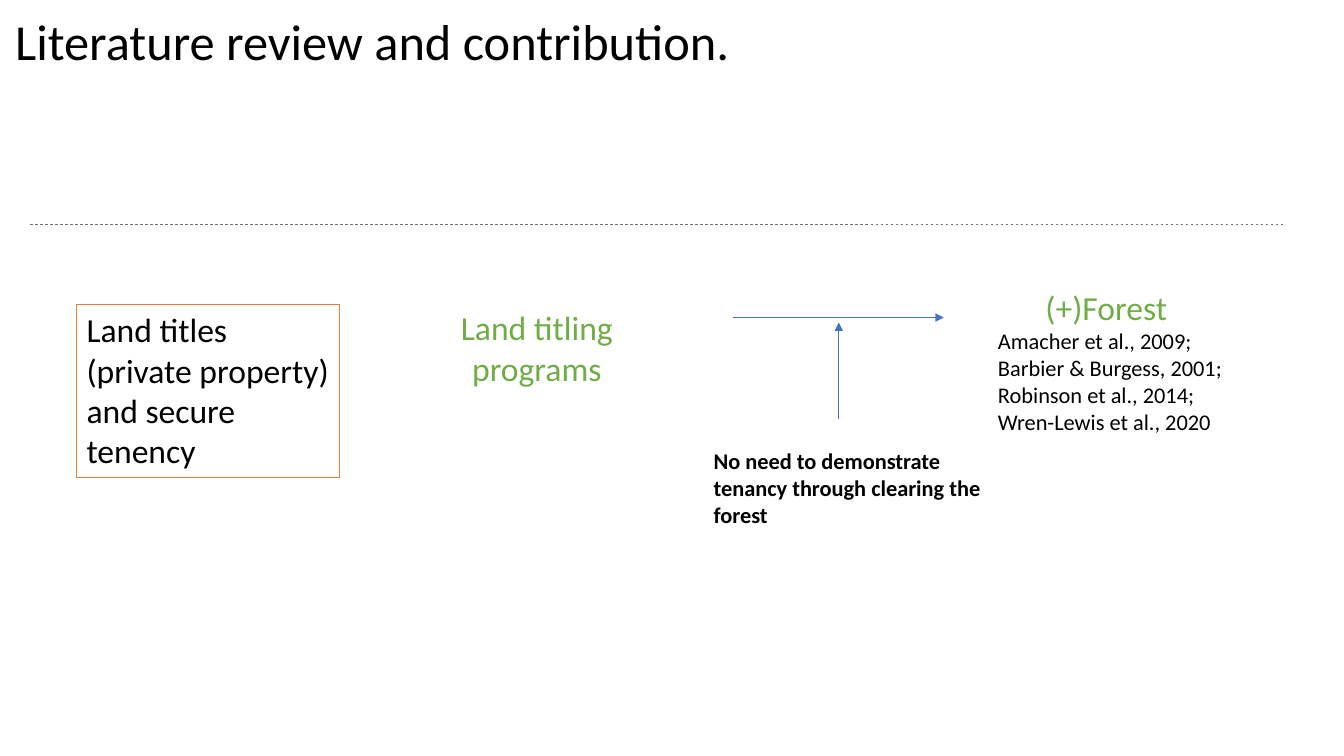
from lxml import etree
from pptx import Presentation
from pptx import util as u
from pptx.dml.color import RGBColor
from pptx.enum import dml, shapes, text
from pptx.oxml import ns

BLACK = RGBColor(0x00, 0x00, 0x00)
WHITE = RGBColor(0xFF, 0xFF, 0xFF)
GREEN = RGBColor(0x70, 0xAD, 0x47)
ORANGE = RGBColor(0xED, 0x7D, 0x31)
BLUE = RGBColor(0x44, 0x72, 0xC4)
GREY = RGBColor(0x76, 0x71, 0x71)
FONT = "Calibri"
LEFT, CENTER = text.PP_ALIGN.LEFT, text.PP_ALIGN.CENTER

TITLE = ("Literature review and contribution.", (0.05, -0.29, 11.5, 1.45))
TENURE = ("Land titles (private property) and secure tenency", (0.76, 3.02, 2.61, 1.72))
# wording, box, size, colour, bold, alignment, wrap
LABELS = [
    ("Land titling programs", (3.89, 3, 2.87, 0.91), 24, GREEN, False, CENTER, True),
    ("Amacher et al., 2009; Barbier & Burgess, 2001; Robinson et al., 2014; "
     "Wren-Lewis et al., 2020", (9.8, 3.2, 2.54, 1.18), 16, BLACK, False, LEFT, True),
    ("(+)Forest", (10.27, 2.8, 1.42, 0.5), 24, GREEN, False, LEFT, False),
    ("No need to demonstrate tenancy through clearing the forest",
     (6.98, 4.39, 3.13, 0.91), 16, BLACK, True, LEFT, True),
]
DIVIDER = (0.3, 2.23, 12.73, 2.23)
ARROWS = [(7.27, 3.15, 9.36, 3.15), (8.32, 4.16, 8.32, 3.2)]


def inches(values):
    return [u.Inches(value) for value in values]


def write(shape, wording, size, color=BLACK, bold=False, align=LEFT, wrap=True):
    frame = shape.text_frame
    frame.word_wrap = wrap
    paragraph = frame.paragraphs[0]
    paragraph.text = wording
    paragraph.alignment = align
    font = paragraph.font
    font.name, font.size, font.bold = FONT, u.Pt(size), bold
    font.color.rgb = color
    return frame


def add_line(slide, ends, color):
    line = slide.shapes.add_connector(shapes.MSO_CONNECTOR.STRAIGHT, *inches(ends))
    line.line.color.rgb = color
    line.line.width = u.Pt(0.5)
    etree.SubElement(line._element.spPr, ns.qn("a:effectLst"))
    return line


def main():
    presentation = Presentation()
    presentation.slide_width, presentation.slide_height = inches((13.33, 7.5))
    slide = presentation.slides.add_slide(presentation.slide_layouts[5])

    title = slide.shapes.title
    title.left, title.top, title.width, title.height = inches(TITLE[1])
    frame = write(title, TITLE[0], 36)
    frame.vertical_anchor = text.MSO_ANCHOR.MIDDLE
    frame.paragraphs[0].line_spacing = 0.9

    add_line(slide, DIVIDER, GREY).line.dash_style = dml.MSO_LINE.DASH

    tenure = slide.shapes.add_shape(shapes.MSO_SHAPE.RECTANGLE, *inches(TENURE[1]))
    tenure.shadow.inherit = False
    tenure.fill.solid()
    tenure.fill.fore_color.rgb = WHITE
    tenure.line.color.rgb = ORANGE
    tenure.line.width = u.Pt(1)
    write(tenure, TENURE[0], 24).vertical_anchor = text.MSO_ANCHOR.TOP

    for wording, box, *style in LABELS:
        write(slide.shapes.add_textbox(*inches(box)), wording, *style)

    for ends in ARROWS:
        arrow = add_line(slide, ends, BLUE)
        etree.SubElement(arrow.line._get_or_add_ln(), ns.qn("a:tailEnd"), type="triangle")

    presentation.save("out.pptx")


if __name__ == "__main__":
    main()
